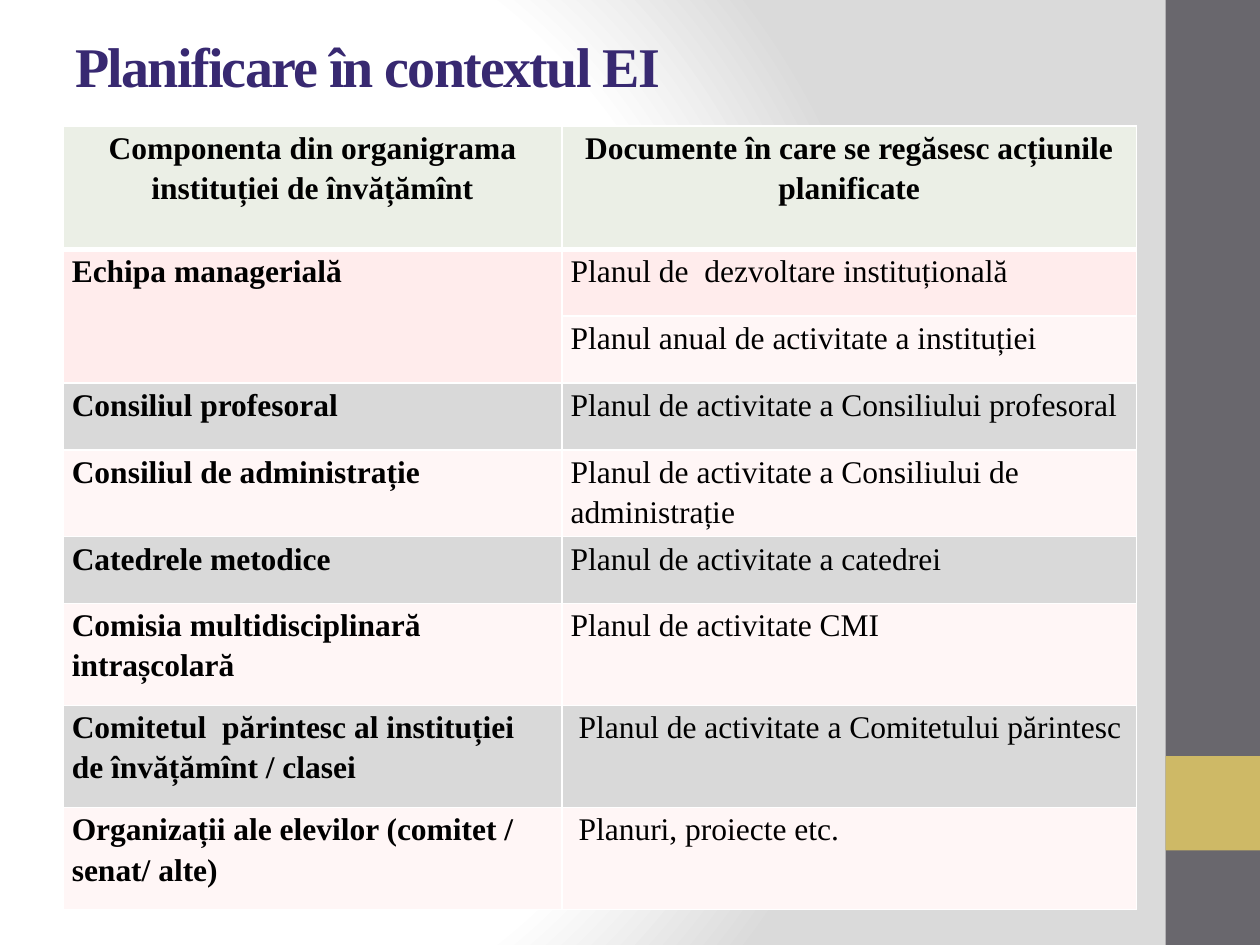
"""Builds a slide matching school bodies to the plans that hold their actions."""
import dataclasses

import lxml.etree
import pptx
import pptx.dml.color
import pptx.enum.shapes
import pptx.enum.text
import pptx.oxml
import pptx.oxml.ns
import pptx.util

Inches = pptx.util.Inches
Pt = pptx.util.Pt
RGB = pptx.dml.color.RGBColor.from_string


@dataclasses.dataclass(frozen=True)
class Theme:
    font: str = "Times New Roman"
    title_size: int = 32
    cell_size: int = 18
    title: str = "382971"
    text: str = "000000"
    sidebar: str = "69676D"
    accent: str = "CEB966"
    white: str = "FFFFFF"
    back: str = "DADADA"
    header: str = "EBEFE6"
    pink: str = "FFECEC"
    light: str = "FFF6F6"
    gray: str = "D9D9D9"


theme = Theme()


def style(p, size, color, bold):
    p.font.name = theme.font
    p.font.size = Pt(size)
    p.font.bold = bold
    p.font.color.rgb = RGB(color)


def add_border(tcPr, side, width):
    ln = lxml.etree.SubElement(tcPr, pptx.oxml.ns.qn(f"a:ln{side}"), w=str(Pt(width)))
    fill = lxml.etree.SubElement(ln, pptx.oxml.ns.qn("a:solidFill"))
    lxml.etree.SubElement(fill, pptx.oxml.ns.qn("a:srgbClr"), val=theme.white)


prs = pptx.Presentation()
prs.slide_width = Inches(10)
prs.slide_height = Inches(7.5)
s = prs.slides.add_slide(prs.slide_layouts[6])

stops = "".join(
    f'<a:gs pos="{pos * 1000}"><a:srgbClr val="{color}"/></a:gs>'
    for pos, color in [(0, theme.white), (75, theme.white), (100, theme.back)]
)
s.background.fill.solid()
bgPr = s.background.fill._xPr
bgPr.replace(bgPr[0], pptx.oxml.parse_xml(
    f'<a:gradFill {pptx.oxml.ns.nsdecls("a")} rotWithShape="1"><a:gsLst>{stops}</a:gsLst>'
    '<a:path path="circle"><a:fillToRect l="20000" t="50000" r="100000" b="50000"/></a:path>'
    "</a:gradFill>"
))

for top, height, color in [(0, 7.5, theme.sidebar), (6, 0.75, theme.accent)]:
    sp = s.shapes.add_shape(pptx.enum.shapes.MSO_SHAPE.RECTANGLE,
                            Inches(9.25), Inches(top), Inches(0.75), Inches(height))
    sp.shadow.inherit = False
    sp.fill.solid()
    sp.fill.fore_color.rgb = RGB(color)
    sp.line.fill.background()

title = s.shapes.add_textbox(Inches(0.5), Inches(0.17), Inches(9), Inches(0.7))
tf = title.text_frame
tf.word_wrap = True
tf.vertical_anchor = pptx.enum.text.MSO_ANCHOR.MIDDLE
p = tf.paragraphs[0]
r = p.add_run()
r.text = "Planificare în contextul EI"
r.font._element.set("spc", "-100")
style(p, theme.title_size, theme.title, True)

rows = [
    (0.98, theme.header, "Componenta din organigrama instituției de învățămînt",
     "Documente în care se regăsesc acțiunile planificate"),
    (0.53, theme.pink, "Echipa managerială", "Planul de  dezvoltare instituțională"),
    (0.53, theme.light, "", "Planul anual de activitate a instituției"),
    (0.53, theme.gray, "Consiliul profesoral", "Planul de activitate a Consiliului profesoral"),
    (0.63, theme.light, "Consiliul de administrație",
     "Planul de activitate a Consiliului de administrație"),
    (0.53, theme.gray, "Catedrele metodice", "Planul de activitate a catedrei"),
    (0.81, theme.light, "Comisia multidisciplinară intrașcolară", "Planul de activitate CMI"),
    (0.81, theme.gray, "Comitetul  părintesc al instituției de învățămînt / clasei",
     " Planul de activitate a Comitetului părintesc"),
    (0.81, theme.light, "Organizații ale elevilor (comitet / senat/ alte)",
     " Planuri, proiecte etc."),
]
table = s.shapes.add_table(len(rows), 2, Inches(0.5), Inches(1), Inches(8.52), Inches(6.23)).table
table.columns[0].width = Inches(3.96)
table.columns[1].width = Inches(4.56)

for i, (height, color, *texts) in enumerate(rows):
    table.rows[i].height = Inches(height)
    for j, text in enumerate(texts):
        cell = table.cell(i, j)
        cell.margin_left = cell.margin_right = Inches(0.07)
        cell.margin_top = cell.margin_bottom = 0
        tcPr = cell._tc.get_or_add_tcPr()
        for side in "LRTB":
            add_border(tcPr, side, 3 if (i, side) in [(0, "B"), (1, "T")] else 1)
        cell.fill.solid()
        cell.fill.fore_color.rgb = RGB(color)
        p = cell.text_frame.paragraphs[0]
        p.text = text
        p.line_spacing = 1.15
        p.space_after = Pt(10)
        if i == 0:
            p.alignment = pptx.enum.text.PP_ALIGN.CENTER
        style(p, theme.cell_size, theme.text, i == 0 or j == 0)
table.cell(1, 0).merge(table.cell(2, 0))

prs.save("out.pptx")
